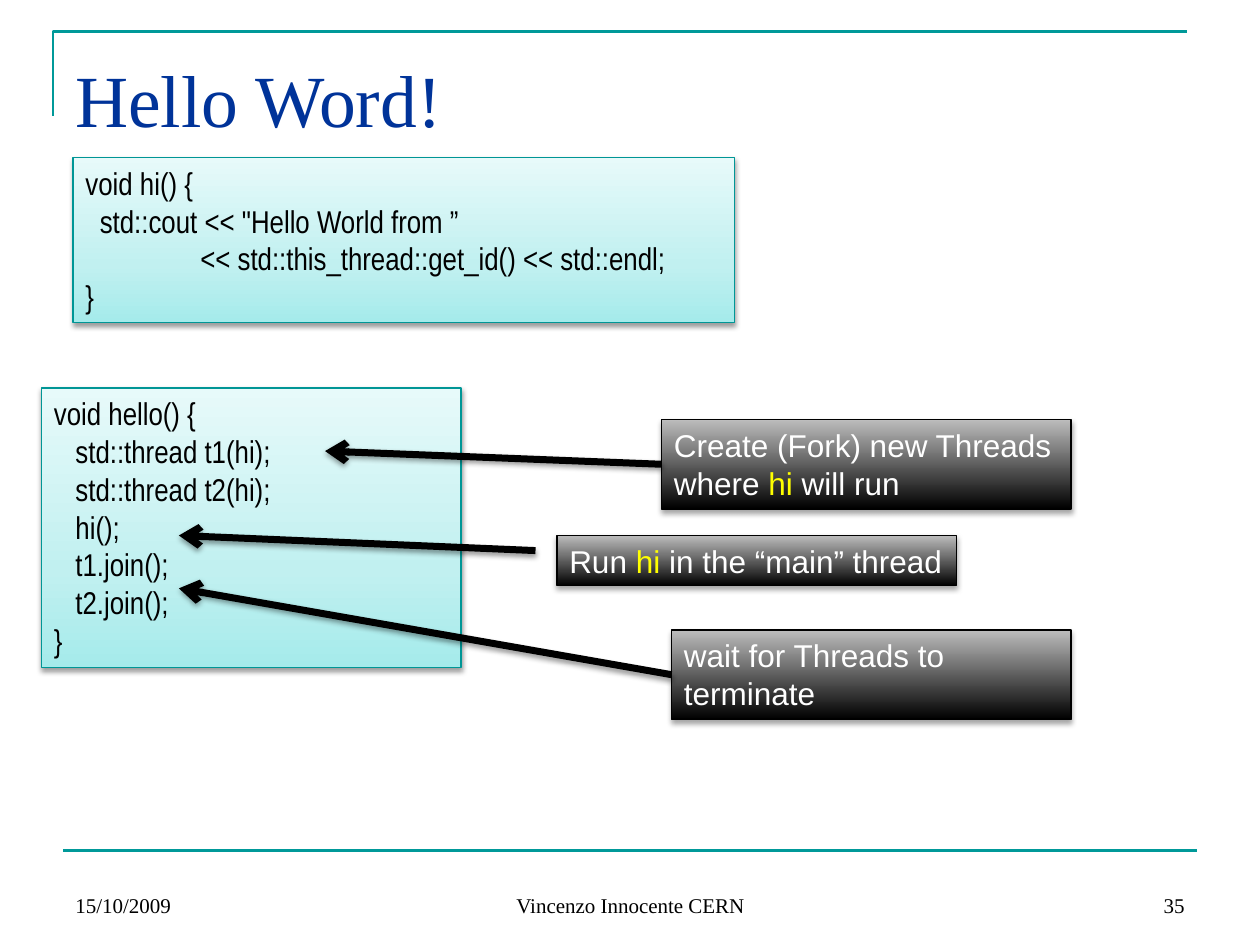
from lxml import etree
from pptx import Presentation
from pptx import util as u
from pptx.dml.color import RGBColor
from pptx.enum import shapes, text
from pptx.oxml import ns

TEAL, BLACK, WHITE, YELLOW = "009999", "000000", "FFFFFF", "FFFF00"
SERIF = "Times New Roman"


def color(value):
    return RGBColor.from_string(value)


def add_element(parent, name, **attributes):
    return etree.SubElement(parent, ns.qn(name), attributes)


class SlideBuilder:
    code_stops = ((0, "A5EBEB"), (35, "C1F0F0"), (100, "E7FAFA"))
    note_stops = ((0, BLACK), (100, "BDBDBD"))

    def __init__(self, slide):
        self.slide = slide

    def set_font(self, font, name, size, value):
        font.name, font.size = name, u.Pt(size)
        font.color.rgb = color(value)

    def set_line(self, item, value, width):
        item.line.color.rgb = color(value)
        item.line.width = u.Pt(width)

    def add_shadow(self, effects, distance, opacity):
        shadow = add_element(effects, "a:outerShdw", blurRad=str(u.Pt(3.1)),
                             dist=str(u.Pt(distance)), dir="5400000", rotWithShape="0")
        tint = add_element(shadow, "a:srgbClr", val=BLACK)
        add_element(tint, "a:alpha", val=str(opacity * 1000))

    def label(self, wording, area, size, value=BLACK, align=text.PP_ALIGN.LEFT,
              anchor=text.MSO_ANCHOR.BOTTOM, top_margin=0.05):
        box = self.slide.shapes.add_textbox(*map(u.Inches, area))
        frame = box.text_frame
        frame.word_wrap = True
        frame.vertical_anchor = anchor
        frame.margin_top = u.Inches(top_margin)
        para = frame.paragraphs[0]
        para.text, para.alignment = wording, align
        self.set_font(para.font, SERIF, size, value)

    def corner_rule(self, points):
        start, *others = [tuple(map(u.Inches, point)) for point in points]
        builder = self.slide.shapes.build_freeform(*start)
        builder.add_line_segments(others, close=False)
        rule = builder.convert_to_shape()
        rule.fill.background()
        rule.shadow.inherit = False
        self.set_line(rule, TEAL, 1.5)

    def panel(self, area, stops, line, distance, opacity):
        box = self.slide.shapes.add_shape(shapes.MSO_SHAPE.RECTANGLE, *map(u.Inches, area))
        box.fill.gradient()
        box.fill.gradient_angle = 90
        properties = box._element.spPr
        stop_list = properties.find(".//" + ns.qn("a:gsLst"))
        for stop in list(stop_list):
            stop_list.remove(stop)
        for position, value in stops:
            stop = add_element(stop_list, "a:gs", pos=str(position * 1000))
            add_element(stop, "a:srgbClr", val=value)
        self.set_line(box, line, 0.75)
        box.shadow.inherit = False
        self.add_shadow(properties.find(ns.qn("a:effectLst")), distance, opacity)
        frame = box.text_frame
        frame.word_wrap = True
        frame.auto_size = text.MSO_AUTO_SIZE.SHAPE_TO_FIT_TEXT
        frame.vertical_anchor = text.MSO_ANCHOR.TOP
        return box

    def code(self, area, source):
        box = self.panel(area, self.code_stops, "009696", 1.6, 38)
        box.text_frame.text = source
        for para in box.text_frame.paragraphs:
            para.alignment = text.PP_ALIGN.LEFT
            self.set_font(para.font, "Arial Narrow", 18, BLACK)

    def note(self, area, *spans):
        box = self.panel(area, self.note_stops, BLACK, 1.8, 35)
        para = box.text_frame.paragraphs[0]
        para.alignment = text.PP_ALIGN.LEFT
        self.set_font(para.font, "Arial", 18, WHITE)
        for wording, value in spans:
            span = para.add_run()
            span.text = wording
            span.font.color.rgb = color(value)
        return box

    def connector(self, start, end, value, width):
        line = self.slide.shapes.add_connector(
            shapes.MSO_CONNECTOR.STRAIGHT, *map(u.Inches, (*start, *end)))
        self.set_line(line, value, width)
        effects = add_element(line._element.spPr, "a:effectLst")
        return line, effects

    def arrow(self, start, end, source=None):
        line, effects = self.connector(start, end, BLACK, 4)
        add_element(line.line._get_or_add_ln(), "a:tailEnd", type="arrow")
        self.add_shadow(effects, 1.6, 38)
        if source is not None:
            line.begin_connect(source, 1)


def main():
    deck = Presentation()
    deck.slide_width, deck.slide_height = u.Inches(10), u.Inches(7.5)
    page = SlideBuilder(deck.slides.add_slide(deck.slide_layouts[6]))

    page.corner_rule([(0.42, 0.92), (0.42, 0.25), (9.42, 0.25)])
    page.connector((0.5, 6.75), (9.5, 6.75), TEAL, 1.5)
    page.label("Hello Word!", (0.5, 0.3, 9, 1.25), 42, "003399",
               anchor=text.MSO_ANCHOR.TOP, top_margin=0.13)
    for wording, left, width, align in (
            ("15/10/2009", 0.5, 2.33, text.PP_ALIGN.LEFT),
            ("Vincenzo Innocente CERN", 3.42, 3.17, text.PP_ALIGN.CENTER),
            ("35", 7.17, 2.33, text.PP_ALIGN.RIGHT)):
        page.label(wording, (left, 6.83, width, 0.5), 12, align=align)

    page.code((0.58, 1.25, 5.25, 1.31), """void hi() {
  std::cout << "Hello World from ”
                << std::this_thread::get_id() << std::endl;
}""")
    page.code((0.33, 3.08, 3.33, 2.22), """void hello() {
   std::thread t1(hi);
   std::thread t2(hi);
   hi();
   t1.join();
   t2.join();
}""")

    fork = page.note((5.25, 3.33, 3.25, 0.71), ("Create (Fork) new Threads where ", WHITE),
                     ("hi", YELLOW), (" will run", WHITE))
    page.note((4.42, 4.25, 3.17, 0.4), ("Run ", WHITE), ("hi", YELLOW),
              (" in the “main” thread", WHITE))
    join = page.note((5.33, 5, 3.17, 0.71), ("wait for Threads to terminate", WHITE))

    page.arrow((5.25, 3.69), (2.58, 3.58), fork)
    page.arrow((4.25, 4.37), (1.42, 4.25))
    page.arrow((5.33, 5.35), (1.42, 4.67), join)
    deck.save("out.pptx")


if __name__ == "__main__":
    main()
